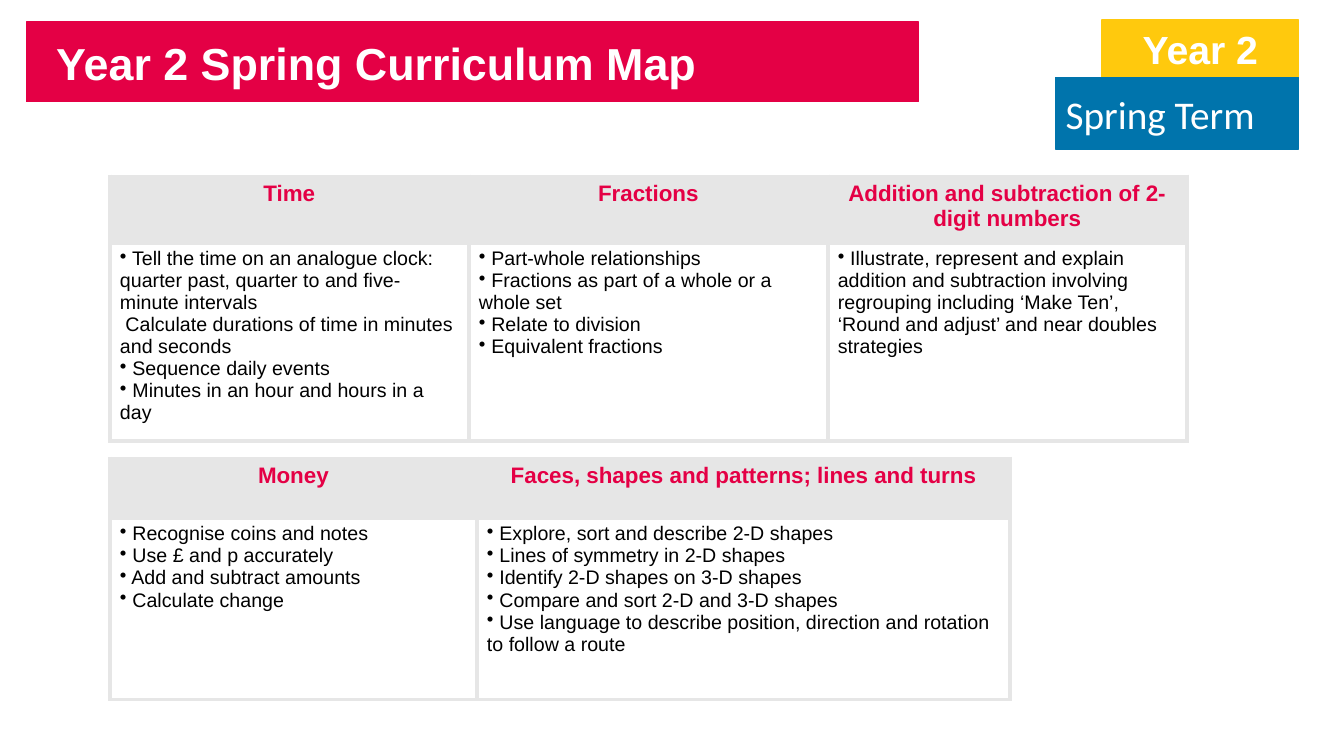
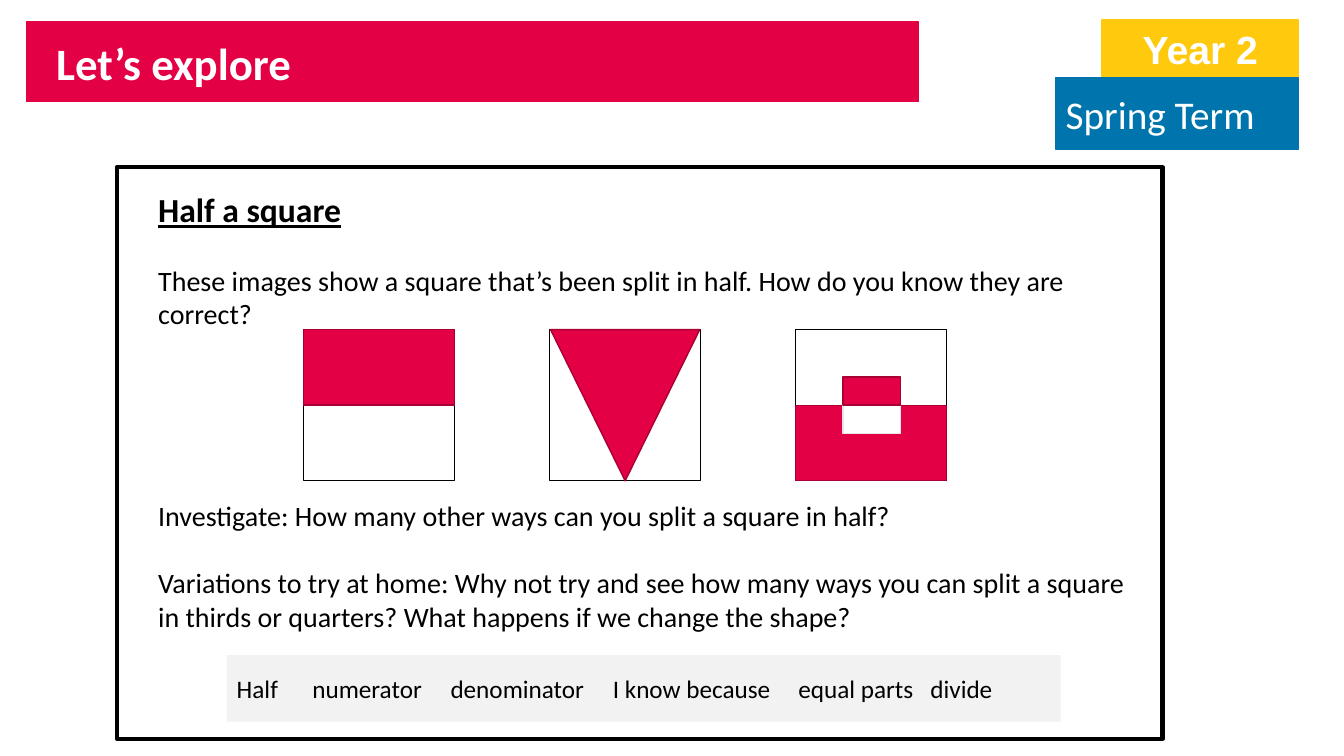
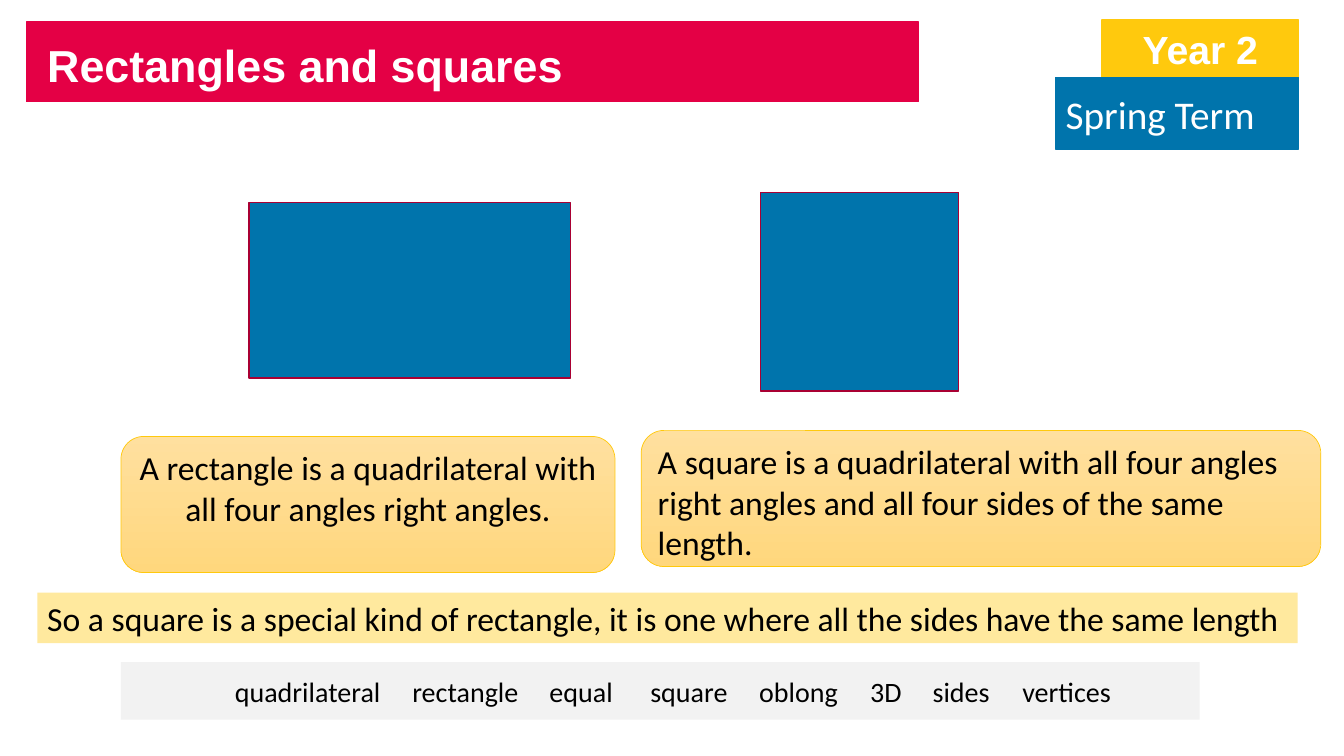
"""Build three Year 2 spring term maths slides."""
from dataclasses import dataclass
from typing import Optional

from lxml.etree import SubElement
from pptx import Presentation
from pptx.dml.color import RGBColor
from pptx.enum.shapes import MSO_SHAPE
from pptx.enum.text import MSO_ANCHOR, PP_ALIGN
from pptx.oxml.ns import qn
from pptx.util import Pt

EMU_PER_PX = 9144
COLORS = {
    "red": "E40045", "dark_red": "A90033", "yellow": "FFC90D", "blue": "0074AC",
    "white": "FFFFFF", "black": "000000", "grey": "E6E6E6", "light_grey": "F2F2F2",
    "pale_yellow": "FFE99E", "card_top": "FFE09F", "card_bottom": "FFD77D",
}


@dataclass(frozen=True)
class Box:
    left: int
    top: int
    width: int
    height: int

    def emu(self) -> tuple:
        return tuple(px(v) for v in (self.left, self.top, self.width, self.height))


@dataclass(frozen=True)
class Style:
    size: int
    font: str = "Calibri"
    color: str = "black"
    bold: bool = False
    underline: bool = False
    align: PP_ALIGN = PP_ALIGN.LEFT


@dataclass(frozen=True)
class Line:
    text: str
    style: Style
    space_after: int = 0


@dataclass(frozen=True)
class Topic:
    heading: str
    lines: tuple
    width: int


@dataclass(frozen=True)
class TopicTable:
    left: int
    top: int
    row_heights: tuple
    topics: tuple


@dataclass(frozen=True)
class WordBank:
    box: Box
    size: int
    margin_left: int
    words: tuple
    tab_stops: tuple


@dataclass(frozen=True)
class Card:
    box: Box
    text: str
    align: PP_ALIGN


YEAR = Style(28, "Arial", "white", bold=True, align=PP_ALIGN.CENTER)
TERM = Style(28, color="white")
TOPIC_HEADING = Style(16, "Arial", "red", bold=True, align=PP_ALIGN.CENTER)
TOPIC_LINE = Style(14, "Arial")
TASK_HEADING = Style(24, bold=True, underline=True)
TASK = Style(20)

TOPIC_TABLES = (
    TopicTable(109, 175, (66, 194), (
        Topic("Time", (
            "• Tell the time on an analogue clock: quarter past, quarter to and five-minute intervals",
            " Calculate durations of time in minutes and seconds",
            "• Sequence daily events",
            "• Minutes in an hour and hours in a day"), 356),
        Topic("Fractions", (
            "• Part-whole relationships",
            "• Fractions as part of a whole or a whole set",
            "• Relate to division",
            "• Equivalent fractions"), 356),
        Topic("Addition and subtraction of 2-digit numbers", (
            "• Illustrate, represent and explain addition and subtraction involving regrouping "
            "including ‘Make Ten’, ‘Round and adjust’ and near doubles strategies",), 356))),
    TopicTable(109, 455, (59, 180), (
        Topic("Money", (
            "• Recognise coins and notes",
            "• Use £ and p accurately",
            "• Add and subtract amounts",
            "• Calculate change"), 364),
        Topic("Faces, shapes and patterns; lines and turns", (
            "• Explore, sort and describe 2-D shapes",
            "• Lines of symmetry in 2-D shapes",
            "• Identify 2-D shapes on 3-D shapes",
            "• Compare and sort 2-D and 3-D shapes",
            "• Use language to describe position, direction and rotation to follow a route"), 529))),
)

TASK_LINES = (
    Line("Half a square", TASK_HEADING, 24),
    Line("These images show a square that’s been split in half. "
         "How do you know they are correct?", TASK, 120),
    Line("Investigate: How many other ways can you split a square in half?", TASK, 24),
    Line("Variations to try at home: Why not try and see how many ways you can split a square "
         "in thirds or quarters? What happens if we change the shape?", TASK),
)

HALF_WORDS = WordBank(
    Box(225, 650, 827, 66), 18, 10,
    ("Half", "numerator", "denominator", "I know because", "equal parts", "divide"),
    (75, 212, 373, 557, 688))
SHAPE_WORDS = WordBank(
    Box(120, 657, 1070, 57), 20, 113,
    ("quadrilateral", "rectangle", "equal", "square", "oblong", "3D", "sides", "vertices"),
    (176, 312, 412, 520, 630, 692, 781))

CARDS = (
    Card(Box(636, 427, 674, 135),
         "A square is a quadrilateral with all four angles right angles "
         "and all four sides of the same length.", PP_ALIGN.LEFT),
    Card(Box(120, 433, 490, 135),
         "A rectangle is a quadrilateral with all four angles right angles.", PP_ALIGN.CENTER),
)


def px(value: int) -> int:
    return value * EMU_PER_PX


def rgb(name: str) -> RGBColor:
    return RGBColor.from_string(COLORS[name])


def style_paragraph(paragraph, style: Style) -> None:
    paragraph.alignment = style.align
    font = paragraph.font
    font.size = Pt(style.size)
    font.name = style.font
    font.bold = style.bold
    font.underline = style.underline
    font.color.rgb = rgb(style.color)


def write_lines(text_frame, lines: tuple) -> None:
    for index, line in enumerate(lines):
        paragraph = text_frame.add_paragraph() if index else text_frame.paragraphs[0]
        paragraph.text = line.text.removeprefix("•")
        if line.text.startswith("•"):
            properties = paragraph._p.get_or_add_pPr()
            properties.set("marL", "0")
            properties.set("indent", "0")
            SubElement(properties, qn("a:buChar")).set("char", "•")
        style_paragraph(paragraph, line.style)
        paragraph.space_after = Pt(line.space_after)


def add_block(slide, box: Box, fill: str, line: Optional[str] = None, weight: float = 1,
              kind: MSO_SHAPE = MSO_SHAPE.RECTANGLE, lines: tuple = (),
              anchor: MSO_ANCHOR = MSO_ANCHOR.TOP):
    shape = slide.shapes.add_shape(kind, *box.emu())
    shape.shadow.inherit = False
    shape.fill.solid()
    shape.fill.fore_color.rgb = rgb(fill)
    if line:
        shape.line.color.rgb = rgb(line)
        shape.line.width = Pt(weight)
    else:
        shape.line.fill.background()
    shape.text_frame.vertical_anchor = anchor
    shape.text_frame.word_wrap = True
    if lines:
        write_lines(shape.text_frame, lines)
    return shape


def add_titled_slide(presentation, title: str, left: int = 46, top: int = 31,
                     font: str = "Arial"):
    slide = presentation.slides.add_slide(presentation.slide_layouts[6])
    add_block(slide, Box(26, 22, 885, 79), "red", "red")
    add_block(slide, Box(1093, 20, 195, 57), "yellow", "yellow", lines=(Line("Year 2", YEAR),))
    add_block(slide, Box(1047, 77, 241, 71), "blue", "blue",
              lines=(Line("Spring Term", TERM),), anchor=MSO_ANCHOR.MIDDLE)
    title_box = slide.shapes.add_textbox(*Box(left, top, 850, 64).emu())
    title_box.text_frame.word_wrap = True
    write_lines(title_box.text_frame, (Line(title, Style(32, font, "white", bold=True)),))
    return slide


def add_cell_borders(cell) -> None:
    properties = cell._tc.get_or_add_tcPr()
    for side in ("a:lnL", "a:lnR", "a:lnT", "a:lnB"):
        border = SubElement(properties, qn(side))
        border.set("w", str(Pt(3)))
        fill = SubElement(border, qn("a:solidFill"))
        SubElement(fill, qn("a:srgbClr")).set("val", COLORS["grey"])


def fill_cell(cell, lines: tuple, fill: str) -> None:
    add_cell_borders(cell)
    cell.fill.solid()
    cell.fill.fore_color.rgb = rgb(fill)
    write_lines(cell.text_frame, lines)


def add_topic_table(slide, spec_table: TopicTable) -> None:
    topics = spec_table.topics
    box = Box(spec_table.left, spec_table.top,
              sum(topic.width for topic in topics), sum(spec_table.row_heights))
    table = slide.shapes.add_table(2, len(topics), *box.emu()).table
    for row, height in zip(table.rows, spec_table.row_heights):
        row.height = px(height)
    for index, topic in enumerate(topics):
        table.columns[index].width = px(topic.width)
        fill_cell(table.cell(0, index), (Line(topic.heading, TOPIC_HEADING),), "grey")
        fill_cell(table.cell(1, index),
                  tuple(Line(text, TOPIC_LINE) for text in topic.lines), "white")


def add_word_bank(slide, bank: WordBank) -> None:
    shape = add_block(slide, bank.box, "light_grey", anchor=MSO_ANCHOR.MIDDLE)
    shape.text_frame.margin_left = px(bank.margin_left)
    paragraph = shape.text_frame.paragraphs[0]
    paragraph.text = "\t".join(bank.words)
    tab_list = SubElement(paragraph._p.get_or_add_pPr(), qn("a:tabLst"))
    for stop in bank.tab_stops:
        tab = SubElement(tab_list, qn("a:tab"))
        tab.set("pos", str(px(stop)))
        tab.set("algn", "l")
    style_paragraph(paragraph, Style(bank.size))


def add_card(slide, card: Card) -> None:
    shape = add_block(slide, card.box, "card_top", "yellow", 0.5, MSO_SHAPE.ROUNDED_RECTANGLE,
                      (Line(card.text, Style(24, align=card.align)),))
    shape.text_frame.margin_top = px(4)
    shape.text_frame.margin_bottom = 0
    shape.fill.gradient()
    shape.fill.gradient_angle = 270
    for stop, color in zip(shape.fill.gradient_stops, ("card_top", "card_bottom")):
        stop.color.rgb = rgb(color)


def build_curriculum_map(presentation) -> None:
    slide = add_titled_slide(presentation, "Year 2 Spring Curriculum Map")
    for topic_table in TOPIC_TABLES:
        add_topic_table(slide, topic_table)


def build_half_a_square(presentation) -> None:
    slide = add_titled_slide(presentation, "Let’s explore", font="Calibri")
    add_block(slide, Box(116, 166, 1037, 567), "white", "black", 3)
    add_block(slide, Box(147, 183, 982, 454), "white", "white", lines=TASK_LINES)
    side, half, top = 150, 75, 327
    first, second, third = (301 + 244 * index for index in range(3))
    for left in (first, second, third):
        add_block(slide, Box(left, top, side, side), "white", "black")
    triangle = add_block(slide, Box(second + 1, top, side - 2, side), "red", "dark_red",
                         kind=MSO_SHAPE.ISOSCELES_TRIANGLE)
    triangle.rotation = 180
    middle, notch_left = top + half, third + 47
    add_block(slide, Box(first, top, side, half), "red", "dark_red")
    add_block(slide, Box(third, middle, side, half), "red", "dark_red")
    add_block(slide, Box(notch_left, middle, 57, 28), "white", "grey")
    add_block(slide, Box(notch_left, middle - 28, 57, 28), "red", "dark_red")
    add_word_bank(slide, HALF_WORDS)


def build_rectangles_and_squares(presentation) -> None:
    slide = add_titled_slide(presentation, "Rectangles and squares", 37, 33)
    for box in (Box(247, 201, 319, 174), Box(754, 191, 197, 197)):
        add_block(slide, box, "blue", "dark_red")
    for card in CARDS:
        add_card(slide, card)
    conclusion = ("So a square is a special kind of rectangle, "
                  "it is one where all the sides have the same length")
    add_block(slide, Box(37, 588, 1250, 50), "pale_yellow", lines=(Line(conclusion, Style(24)),))
    add_word_bank(slide, SHAPE_WORDS)


def main() -> None:
    presentation = Presentation()
    presentation.slide_width = px(1333)
    presentation.slide_height = px(750)
    build_curriculum_map(presentation)
    build_half_a_square(presentation)
    build_rectangles_and_squares(presentation)
    presentation.save("out.pptx")


if __name__ == "__main__":
    main()
